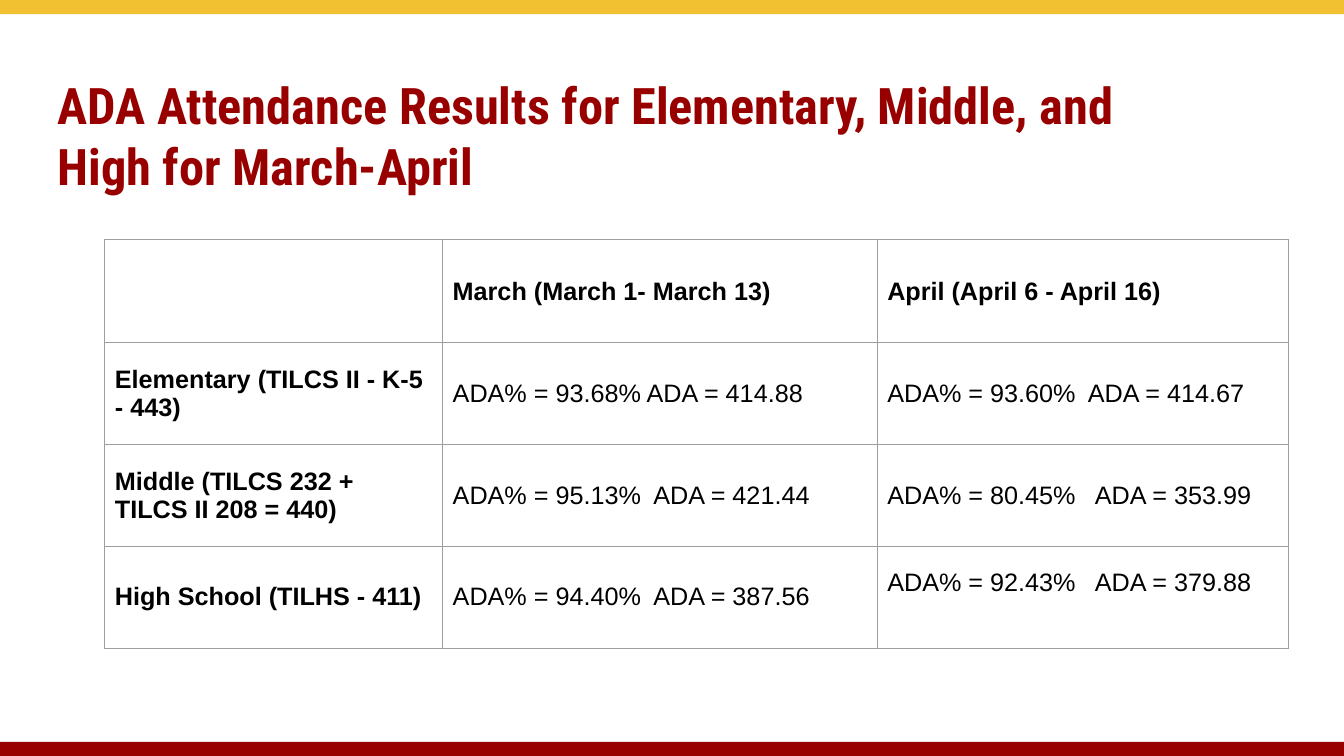
import dataclasses

import pptx
import pptx.dml.color
import pptx.enum.shapes
import pptx.enum.text
import pptx.oxml
import pptx.oxml.ns
import pptx.util

Inches = pptx.util.Inches


@dataclasses.dataclass(frozen=True)
class Theme:
    gold: str = "F1C131"
    maroon: str = "980000"
    ink: str = "000000"
    border: str = "9E9E9E"
    title_font: str = "Roboto Condensed"
    body_font: str = "Arial"
    title_size: int = 36
    body_size: int = 18
    border_width: float = 0.75


def color(value):
    return pptx.dml.color.RGBColor.from_string(value)


def write(frame, text, *, font, size, ink, bold=False, tab=None):
    para = frame.paragraphs[0]
    para.alignment = pptx.enum.text.PP_ALIGN.LEFT
    if tab:
        stops = pptx.oxml.parse_xml(
            f'<a:tabLst {pptx.oxml.ns.nsdecls("a")}>'
            f'<a:tab pos="{Inches(tab)}" algn="l"/></a:tabLst>'
        )
        para._p.get_or_add_pPr().append(stops)
    span = para.add_run()
    span.text = text
    span.font.name = font
    span.font.size = pptx.util.Pt(size)
    span.font.bold = bold
    span.font.color.rgb = color(ink)


class SlideBuilder:
    def __init__(self, page, theme):
        self.page = page
        self.theme = theme

    def band(self, top, width, height, fill):
        bar = self.page.shapes.add_shape(
            pptx.enum.shapes.MSO_SHAPE.RECTANGLE,
            0, Inches(top), Inches(width), Inches(height),
        )
        bar.shadow.inherit = False
        bar.fill.solid()
        bar.fill.fore_color.rgb = color(fill)
        bar.line.fill.background()

    def title(self, text, left, top, width, height):
        box = self.page.shapes.add_textbox(
            Inches(left), Inches(top), Inches(width), Inches(height)
        )
        frame = box.text_frame
        frame.word_wrap = True
        frame.margin_left = frame.margin_right = frame.margin_bottom = 0
        frame.margin_top = Inches(0.01)
        write(frame, text, font=self.theme.title_font, size=self.theme.title_size,
              ink=self.theme.maroon, bold=True)

    def outline(self, cell):
        properties = cell._tc.get_or_add_tcPr()
        for index, side in enumerate(("lnL", "lnR", "lnT", "lnB")):
            line = pptx.oxml.parse_xml(
                f'<a:{side} {pptx.oxml.ns.nsdecls("a")} '
                f'w="{pptx.util.Pt(self.theme.border_width)}"><a:solidFill>'
                f'<a:srgbClr val="{self.theme.border}"/></a:solidFill></a:{side}>'
            )
            properties.insert(index, line)

    def table(self, rows, left, top, widths, heights, tabs):
        table = self.page.shapes.add_table(
            len(rows), len(widths), Inches(left), Inches(top),
            Inches(sum(widths)), Inches(sum(heights)),
        ).table
        table.first_row = table.horz_banding = False
        for column, width in zip(table.columns, widths):
            column.width = Inches(width)
        for row, height in zip(table.rows, heights):
            row.height = Inches(height)
        for row_index, values in enumerate(rows):
            for column_index, text in enumerate(values):
                cell = table.cell(row_index, column_index)
                cell.fill.background()
                cell.vertical_anchor = pptx.enum.text.MSO_ANCHOR.MIDDLE
                cell.margin_left = cell.margin_right = Inches(0.1)
                cell.margin_top = cell.margin_bottom = Inches(0.1)
                self.outline(cell)
                if text:
                    write(cell.text_frame, text, font=self.theme.body_font,
                          size=self.theme.body_size, ink=self.theme.ink,
                          bold=row_index == 0 or column_index == 0,
                          tab=tabs.get((row_index, column_index)))
        return table


def main():
    deck = pptx.Presentation()
    deck.slide_width = Inches(13.33)
    deck.slide_height = Inches(7.5)
    theme = Theme()
    builder = SlideBuilder(deck.slides.add_slide(deck.slide_layouts[6]), theme)

    for top, fill in ((0, theme.gold), (7.36, theme.maroon)):
        builder.band(top, 13.33, 0.14, fill)
    builder.title(
        "ADA Attendance Results for Elementary, Middle, and High for March-April",
        0.57, 0.73, 11.18, 1.29,
    )

    attendance = [
        ("", "March (March 1- March 13)", "April (April 6 - April 16)"),
        ("Elementary (TILCS II - K-5 - 443)",
         "ADA% = 93.68% ADA = 414.88", "ADA% = 93.60%\tADA = 414.67"),
        ("Middle (TILCS 232 + TILCS II 208 = 440)",
         "ADA% = 95.13%\tADA = 421.44", "ADA% = 80.45%\tADA = 353.99"),
        ("High School (TILHS - 411)",
         "ADA% = 94.40%\tADA = 387.56", "ADA% = 92.43%\tADA = 379.88"),
    ]
    narrow_gap, wide_gap = 1.99, 2.06
    tabs = {(1, 2): narrow_gap, (2, 1): narrow_gap, (3, 1): narrow_gap,
            (2, 2): wide_gap, (3, 2): wide_gap}
    table = builder.table(attendance, 1.04, 2.38, (3.35, 4.31, 4.08),
                          (1.02, 1.01, 1.01, 1.01), tabs)
    table.cell(3, 2).margin_bottom = Inches(0.38)

    deck.save("out.pptx")


if __name__ == "__main__":
    main()
